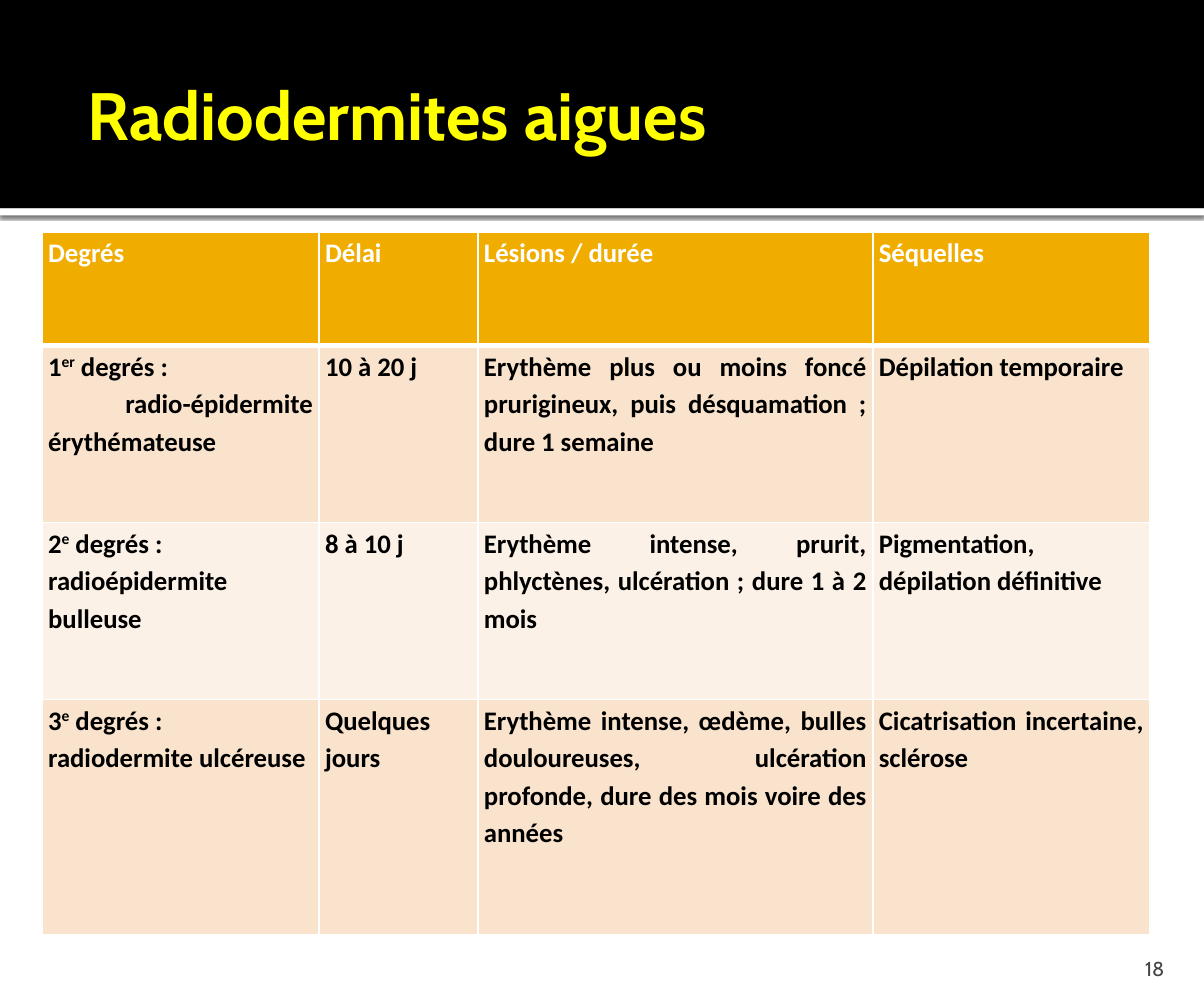
from lxml import etree
from pptx import Presentation
from pptx.dml.color import RGBColor
from pptx.enum.shapes import MSO_SHAPE
from pptx.enum.text import MSO_ANCHOR, PP_ALIGN
from pptx.oxml import parse_xml
from pptx.oxml.ns import nsdecls, qn
from pptx.util import Pt

RECTANGLE = MSO_SHAPE.RECTANGLE
MIDDLE = MSO_ANCHOR.MIDDLE
BOTTOM = MSO_ANCHOR.BOTTOM
JUSTIFY = PP_ALIGN.JUSTIFY
LEFT = PP_ALIGN.LEFT
RIGHT = PP_ALIGN.RIGHT

BLACK = RGBColor(0x00, 0x00, 0x00)
WHITE = RGBColor(0xFF, 0xFF, 0xFF)
YELLOW = RGBColor(0xFF, 0xFF, 0x00)
GRAY = RGBColor(0x45, 0x45, 0x45)
AMBER = RGBColor(0xF0, 0xAD, 0x00)
PEACH = RGBColor(0xF9, 0xE3, 0xCC)
CREAM = RGBColor(0xFC, 0xF1, 0xE7)

SLIDE_WIDTH, SLIDE_HEIGHT = 720, 595.44
HEADER_HEIGHT = 124.56
COLUMN_WIDTHS = [165.6, 95.04, 236.16, 165.6]
ROW_HEIGHTS = [67.68, 105.84, 105.84, 140.4]
HEADINGS = ["Degrés", "Délai", "Lésions / durée", "Séquelles"]
DEGREES = [
    ("1", "er", " radio-épidermite érythémateuse", "10 à 20 j",
     "Erythème plus ou moins foncé prurigineux, puis désquamation ; dure 1 semaine",
     "Dépilation temporaire"),
    ("2", "e", "radioépidermite bulleuse", "8 à 10 j",
     "Erythème intense, prurit, phlyctènes, ulcération ; dure 1 à 2 mois",
     "Pigmentation, dépilation définitive"),
    ("3", "e", "radiodermite ulcéreuse", "Quelques jours",
     "Erythème intense, œdème, bulles douloureuses, ulcération profonde, "
     "dure des mois voire des années",
     "Cicatrisation incertaine, sclérose"),
]


def format_font(font, name, size, color, bold=False):
    font.name = name
    font.size = Pt(size)
    font.bold = bold
    font.color.rgb = color


def add_band(slide, left, top, width, height, color):
    band = slide.shapes.add_shape(RECTANGLE, Pt(left), Pt(top), Pt(width), Pt(height))
    band.shadow.inherit = False
    band.fill.solid()
    band.fill.fore_color.rgb = color
    band.line.fill.background()
    return band


def add_shadow(shape):
    effects = shape._element.spPr.find(qn("a:effectLst"))
    effects.append(parse_xml(
        f'<a:outerShdw {nsdecls("a")} blurRad="{Pt(2.5)}" dist="{Pt(0.8)}" dir="5400000" '
        'algn="t" rotWithShape="0"><a:srgbClr val="000000"><a:alpha val="60000"/>'
        '</a:srgbClr></a:outerShdw>'))


def add_text(slide, box, text, anchor, alignment, margins, size, color, bold=False):
    text_box = slide.shapes.add_textbox(*map(Pt, box))
    frame = text_box.text_frame
    frame.word_wrap = True
    frame.vertical_anchor = anchor
    (frame.margin_left, frame.margin_top,
     frame.margin_right, frame.margin_bottom) = map(Pt, margins)
    frame.text = text
    paragraph = frame.paragraphs[0]
    paragraph.alignment = alignment
    format_font(paragraph.runs[0].font, "Cabin", size, color, bold)


def add_header(slide, left, top, width, height):
    rule = add_band(slide, left, top + height, width, 4.32, WHITE)
    add_shadow(rule)
    add_band(slide, left, top, width, height, BLACK)
    add_text(slide, (left + 36, top + 13.68, width - 72, 108.72), "Radiodermites aigues",
             MIDDLE, LEFT, (16.56, 3.6, 3.6, 3.6), 40, YELLOW, True)


def set_borders(cell, bottom_width):
    properties = cell._tc.get_or_add_tcPr()
    widths = {"a:lnL": 1, "a:lnR": 1, "a:lnT": 1, "a:lnB": bottom_width}
    for index, (tag, width) in enumerate(widths.items()):
        line = etree.Element(qn(tag), w=str(Pt(width)))
        fill = etree.SubElement(line, qn("a:solidFill"))
        etree.SubElement(fill, qn("a:srgbClr"), val=str(WHITE))
        properties.insert(index, line)


def format_cell(cell, fill, color, bottom_width=1):
    cell.margin_left = cell.margin_right = Pt(3.6)
    cell.margin_top = cell.margin_bottom = Pt(0)
    cell.fill.solid()
    cell.fill.fore_color.rgb = fill
    set_borders(cell, bottom_width)
    for paragraph in cell.text_frame.paragraphs:
        paragraph.alignment = JUSTIFY
        paragraph.line_spacing = 1.15
        for run in paragraph.runs:
            format_font(run.font, "Calibri", 16, color, True)


def write_degree(cell, number, suffix, name):
    frame = cell.text_frame
    frame.text = number
    ordinal = frame.paragraphs[0].add_run()
    ordinal.text = suffix
    ordinal._r.get_or_add_rPr().set("baseline", "30000")
    frame.paragraphs[0].add_run().text = " degrés :"
    frame.add_paragraph().text = name


def add_degree_table(slide, left, top, width, height):
    frame = slide.shapes.add_table(len(ROW_HEIGHTS), len(COLUMN_WIDTHS),
                                   Pt(left), Pt(top), Pt(width), Pt(height))
    table = frame.table
    for column, column_width in zip(table.columns, COLUMN_WIDTHS):
        column.width = Pt(column_width)
    for row, row_height in zip(table.rows, ROW_HEIGHTS):
        row.height = Pt(row_height)
    for column_index, heading in enumerate(HEADINGS):
        cell = table.cell(0, column_index)
        cell.text_frame.text = heading
        format_cell(cell, AMBER, WHITE, 3)
    for row_index, (number, suffix, name, *details) in enumerate(DEGREES, 1):
        write_degree(table.cell(row_index, 0), number, suffix, name)
        for column_index, detail in enumerate(details, 1):
            table.cell(row_index, column_index).text_frame.text = detail
        for cell in table.rows[row_index].cells:
            format_cell(cell, PEACH if row_index % 2 else CREAM, BLACK)


def add_page_number(slide, left, top, width, height):
    add_text(slide, (left, top, width, height), "18", BOTTOM, RIGHT,
             (7.2, 3.6, 7.2, 0), 12, GRAY)


def main():
    presentation = Presentation()
    presentation.slide_width = Pt(SLIDE_WIDTH)
    presentation.slide_height = Pt(SLIDE_HEIGHT)
    slide = presentation.slides.add_slide(presentation.slide_layouts[6])
    add_header(slide, 0, 0, SLIDE_WIDTH, HEADER_HEIGHT)
    add_degree_table(slide, 25.2, 138.96, sum(COLUMN_WIDTHS), sum(ROW_HEIGHTS))
    add_page_number(slide, 645.84, 562.32, 57.6, 23.76)
    presentation.save("out.pptx")


if __name__ == "__main__":
    main()
